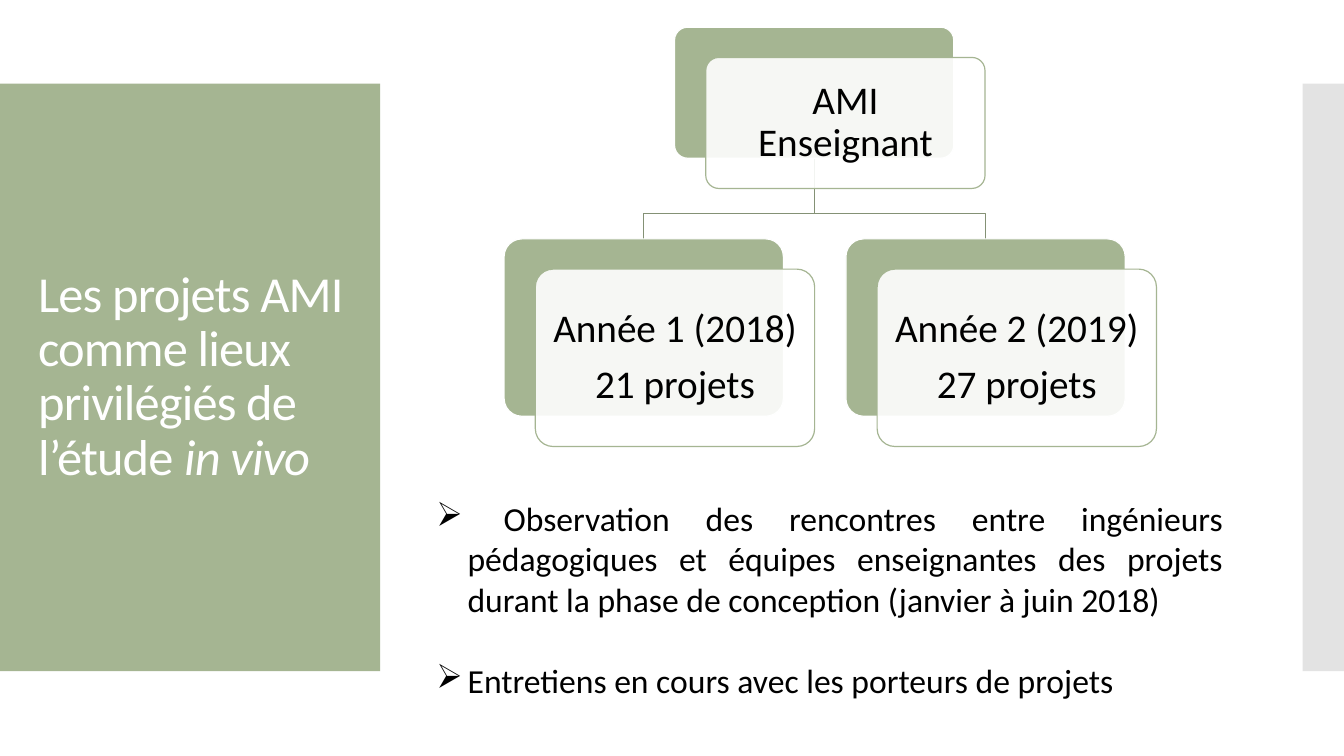
from lxml.etree import SubElement
from pptx import Presentation
from pptx.dml.color import RGBColor
from pptx.enum.shapes import MSO_SHAPE
from pptx.enum.text import MSO_ANCHOR, PP_ALIGN
from pptx.oxml.ns import qn
from pptx.util import Inches, Pt

GREEN, WHITE, BLACK = "A5B592", "FFFFFF", "000000"
CARD_W, CARD_DX, CARD_DY = 2.77, 0.31, 0.3


def color(value):
    return RGBColor.from_string(value)


def add_box(s, kind, x, y, w, h, fill, line=None, opacity=100):
    sp = s.shapes.add_shape(kind, Inches(x), Inches(y), Inches(w), Inches(h))
    sp.shadow.inherit = False
    sp.fill.solid()
    sp.fill.fore_color.rgb = color(fill)
    if opacity < 100:
        clr = sp.fill._xPr.find(qn("a:solidFill"))[0]
        SubElement(clr, qn("a:alpha")).set("val", str(opacity * 1000))
    if line:
        sp.line.color.rgb = color(line)
        sp.line.width = Pt(0.85)
    else:
        sp.line.fill.background()
    return sp


def add_text(s, x, y, w, h, anchor=MSO_ANCHOR.TOP, inset=0.1):
    sp = s.shapes.add_textbox(Inches(x), Inches(y), Inches(w), Inches(h))
    tf = sp.text_frame
    tf.word_wrap = True
    tf.vertical_anchor = anchor
    tf.margin_left = tf.margin_right = Inches(inset)
    return tf


def add_paragraph(tf, index, text, size, fill, align=PP_ALIGN.LEFT):
    p = tf.add_paragraph() if index else tf.paragraphs[0]
    p.alignment = align
    p.font.name = "Calibri"
    p.font.size = Pt(size)
    p.font.color.rgb = color(fill)
    p.add_run().text = text
    return p


def add_title(s, text, italic_text):
    tf = add_text(s, 0.28, 1.23, 3.22, 5.03, MSO_ANCHOR.MIDDLE)
    p = add_paragraph(tf, 0, text, 36, WHITE)
    p.line_spacing = 0.9
    r = p.add_run()
    r.text = italic_text
    r.font.italic = True
    for r in p.runs:
        r._r.get_or_add_rPr().set("spc", "-60")


def add_branch(s, x1, y1, x2, y2):
    bend = y2 - 0.25
    fb = s.shapes.build_freeform(Inches(x1), Inches(y1), scale=1.0)
    points = [(x1, bend), (x2, bend), (x2, y2)]
    fb.add_line_segments([(Inches(x), Inches(y)) for x, y in points], close=False)
    sp = fb.convert_to_shape()
    sp.shadow.inherit = False
    sp.fill.background()
    sp.line.color.rgb = color("849175")
    sp.line.width = Pt(0.85)


def add_card(s, x, y, h, lines, inset):
    layers = [(0, 0, GREEN, WHITE, 100), (CARD_DX, CARD_DY, WHITE, GREEN, 90)]
    for dx, dy, fill, line, opacity in layers:
        sp = add_box(s, MSO_SHAPE.ROUNDED_RECTANGLE, x + dx, y + dy, CARD_W, h,
                     fill, line, opacity)
        sp.adjustments[0] = 0.1
    tf = add_text(s, x + CARD_DX + 0.05, y + CARD_DY + 0.05, CARD_W - 0.1, h - 0.1,
                  MSO_ANCHOR.MIDDLE, inset)
    for i, text in enumerate(lines):
        p = add_paragraph(tf, i, text, 28, BLACK, PP_ALIGN.CENTER)
        p.line_spacing = 0.9
        p.space_after = Pt(9.8)


def add_bullets(s, items):
    tf = add_text(s, 4.23, 4.89, 8, 2.12)
    for i, text in enumerate(items):
        p = add_paragraph(tf, i, text, 24, BLACK, PP_ALIGN.JUSTIFY)
        p.space_before = Pt(29.3 if i else 0)
        pPr = p._p.get_or_add_pPr()
        pPr.set("marL", str(Inches(0.31)))
        pPr.set("indent", str(Inches(-0.31)))
        bullet = pPr.makeelement(qn("a:buChar"), {"char": "➢"})
        pPr.find(qn("a:defRPr")).addprevious(bullet)


def main():
    prs = Presentation()
    prs.slide_width, prs.slide_height = Inches(13.33), Inches(7.5)
    s = prs.slides.add_slide(prs.slide_layouts[6])

    add_box(s, MSO_SHAPE.RECTANGLE, 0, 0.83, 3.77, 5.83, GREEN)
    add_box(s, MSO_SHAPE.RECTANGLE, 12.92, 0.83, 0.41, 5.83, "C8C8C8", opacity=50)
    add_title(s, "Les projets AMI comme lieux privilégiés de l’étude ", "in vivo")

    root_x, root_y, root_h, year_y = 6.69, 0.27, 1.3, 2.37
    years = [(5, ["Année 1 (2018)", "21 projets"]),
             (8.39, ["Année 2 (2019)", "27 projets"])]
    for x, _ in years:
        add_branch(s, root_x + CARD_W / 2, root_y + root_h, x + CARD_W / 2, year_y)
    add_card(s, root_x, root_y, root_h, ["AMI Enseignant"], 0.15)
    for x, lines in years:
        add_card(s, x, year_y, 1.76, lines, 0.1)

    add_bullets(s, [
        " Observation des rencontres entre ingénieurs pédagogiques et équipes "
        "enseignantes des projets durant la phase de conception (janvier à juin 2018)",
        "Entretiens en cours avec les porteurs de projets",
    ])
    prs.save("out.pptx")


if __name__ == "__main__":
    main()
